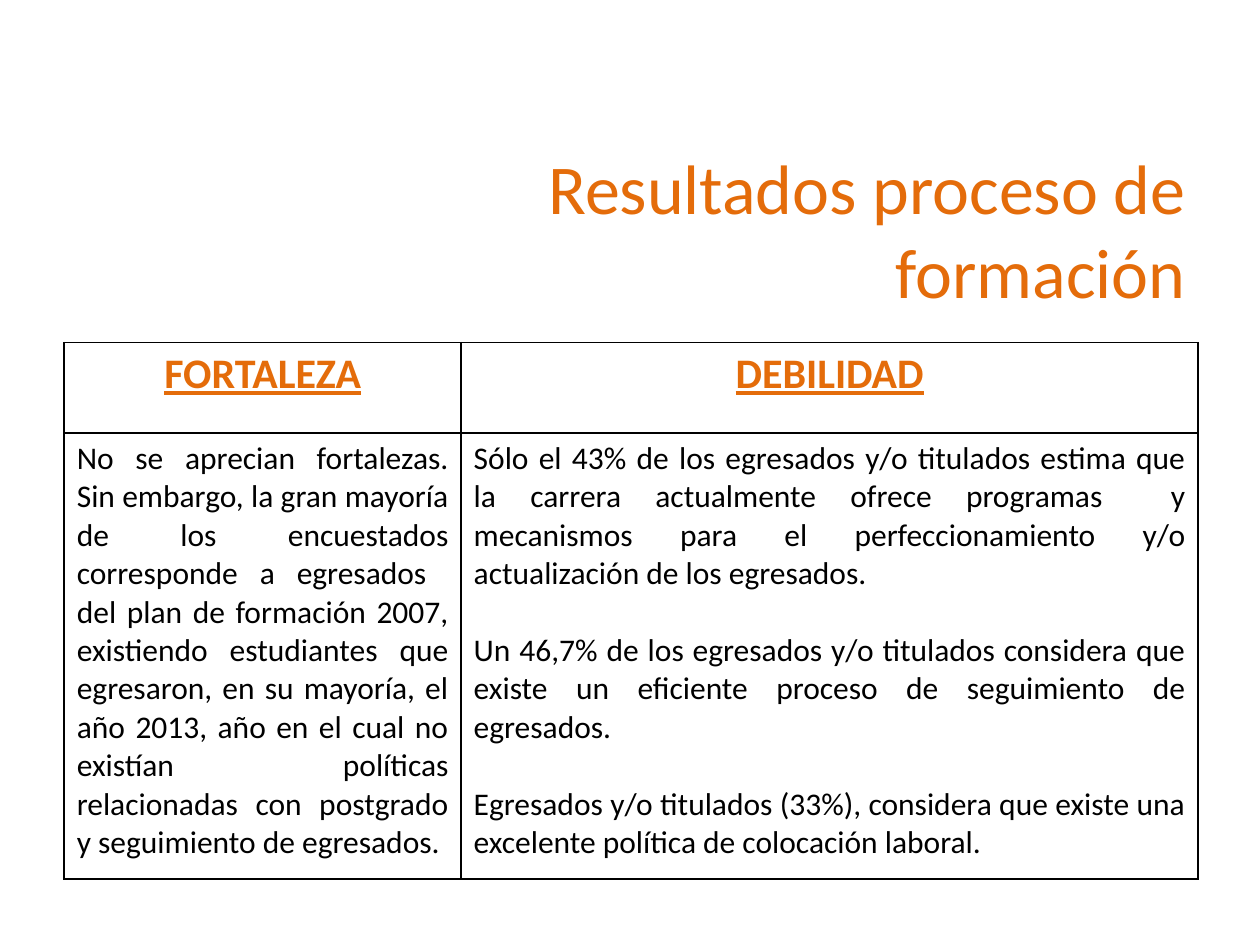
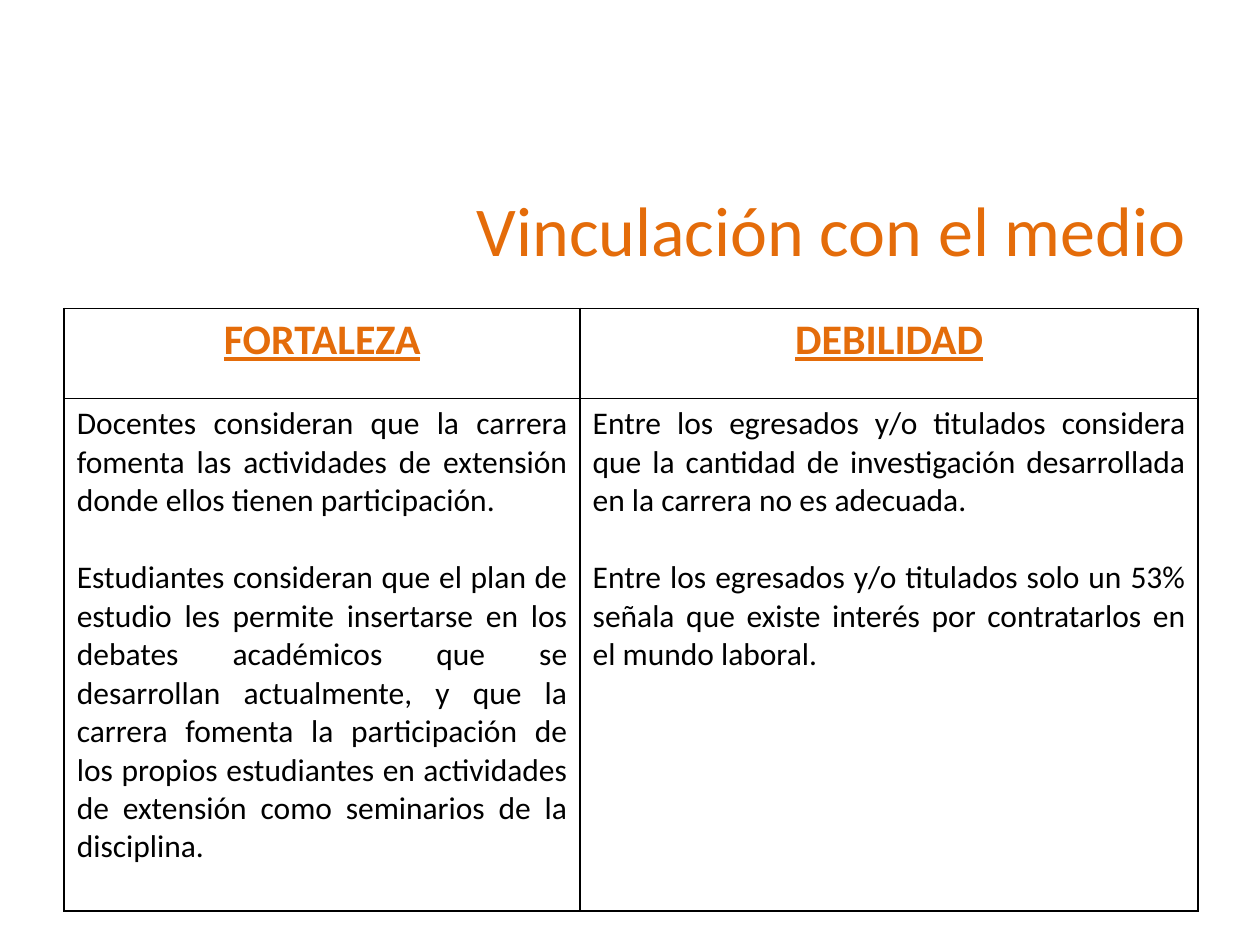
from dataclasses import dataclass

import lxml.etree
import pptx
import pptx.dml.color
import pptx.enum.text
import pptx.oxml.ns
import pptx.util

Pt = pptx.util.Pt
ALIGN = pptx.enum.text.PP_ALIGN
ANCHOR = pptx.enum.text.MSO_ANCHOR

# Shared look
ORANGE, BLACK, WHITE = "E46C0A", "000000", "FFFFFF"
FONT = "Calibri"
TITLE_FORMAT = {"name": FONT, "size": Pt(40), "bold": False, "underline": False}
HEADING_FORMAT = {"name": FONT, "size": Pt(24), "bold": True, "underline": True}
BODY_FORMAT = {"name": FONT, "size": Pt(18), "bold": False, "underline": False}
TITLE_BOX = {"left": Pt(180.7), "top": Pt(105.1), "width": Pt(504), "height": Pt(51.1)}
TABLE_LEFT, TABLE_WIDTH = 36.7, 648
HEADING_HEIGHT = 51.6
PARAGRAPH_GAP = 22
BORDER_WIDTH = 1
HEADINGS = ("FORTALEZA", "DEBILIDAD")


@dataclass
class Assessment:
    title: str
    top: float
    strength_width: float
    body_height: float
    strengths: list[str]
    weaknesses: list[str]


ASSESSMENTS = [
    Assessment(
        "Resultados proceso de formación", 195.8, 226.8, 255,
        ["No se aprecian fortalezas. Sin embargo, la gran mayoría de los encuestados "
         "corresponde a egresados  del plan de formación 2007, existiendo estudiantes "
         "que egresaron, en su mayoría, el año 2013, año en el cual no existían "
         "políticas relacionadas con postgrado y seguimiento de egresados."],
        ["Sólo el 43% de los egresados y/o titulados estima que la carrera actualmente "
         "ofrece programas  y mecanismos para el perfeccionamiento y/o actualización "
         "de los egresados.",
         "Un 46,7% de los egresados y/o titulados considera que existe un eficiente "
         "proceso de seguimiento de egresados.",
         "Egresados y/o titulados (33%), considera que existe una excelente política "
         "de colocación laboral."]),
    Assessment(
        "Vinculación con el medio", 176.2, 294.8, 292.8,
        ["Docentes consideran que la carrera fomenta las actividades de extensión "
         "donde ellos tienen participación.",
         "Estudiantes consideran que el plan de estudio les permite insertarse en los "
         "debates académicos que se desarrollan actualmente, y que la carrera fomenta "
         "la participación de los propios estudiantes en actividades de extensión "
         "como seminarios de la disciplina."],
        ["Entre los egresados y/o titulados considera que la cantidad de investigación "
         "desarrollada en la carrera no es adecuada.",
         "Entre los egresados y/o titulados solo un 53% señala que existe interés por "
         "contratarlos en el mundo laboral."]),
]


def rgb(color: str) -> pptx.dml.color.RGBColor:
    return pptx.dml.color.RGBColor.from_string(color)


def write(frame, texts: list[str], font_format: dict, color: str, align) -> None:
    frame.word_wrap = True
    for index, text in enumerate(texts):
        paragraph = frame.paragraphs[0] if index == 0 else frame.add_paragraph()
        paragraph.alignment = align
        if index:
            paragraph.space_before = Pt(PARAGRAPH_GAP)
        run = paragraph.add_run()
        run.text = text
        for attribute, value in font_format.items():
            setattr(run.font, attribute, value)
        run.font.color.rgb = rgb(color)


def style_cell(cell) -> None:
    """Borders come before the fill in the cell properties."""
    qn = pptx.oxml.ns.qn
    properties = cell._tc.get_or_add_tcPr()
    for side in ("lnL", "lnR", "lnT", "lnB"):
        line = lxml.etree.SubElement(properties, qn(f"a:{side}"), w=str(Pt(BORDER_WIDTH)))
        fill = lxml.etree.SubElement(line, qn("a:solidFill"))
        lxml.etree.SubElement(fill, qn("a:srgbClr"), val=BLACK)
    cell.fill.solid()
    cell.fill.fore_color.rgb = rgb(WHITE)


def add_title(slide, text: str) -> None:
    title = slide.shapes.title
    for attribute, value in TITLE_BOX.items():
        setattr(title, attribute, value)
    title.text_frame.auto_size = pptx.enum.text.MSO_AUTO_SIZE.NONE
    title.text_frame.vertical_anchor = ANCHOR.MIDDLE
    write(title.text_frame, [text], TITLE_FORMAT, ORANGE, ALIGN.RIGHT)


def add_assessment_table(slide, assessment: Assessment) -> None:
    heights = (HEADING_HEIGHT, assessment.body_height)
    widths = (assessment.strength_width, TABLE_WIDTH - assessment.strength_width)
    table = slide.shapes.add_table(
        2, 2, Pt(TABLE_LEFT), Pt(assessment.top), Pt(TABLE_WIDTH), Pt(sum(heights))).table
    table.horz_banding = False
    for row, height in zip(table.rows, heights):
        row.height = Pt(height)
    for column, width in zip(table.columns, widths):
        column.width = Pt(width)

    bodies = (assessment.strengths, assessment.weaknesses)
    for column, (heading, body) in enumerate(zip(HEADINGS, bodies)):
        heading_cell, body_cell = table.cell(0, column), table.cell(1, column)
        style_cell(heading_cell)
        style_cell(body_cell)
        write(heading_cell.text_frame, [heading], HEADING_FORMAT, ORANGE, ALIGN.CENTER)
        write(body_cell.text_frame, body, BODY_FORMAT, BLACK, ALIGN.JUSTIFY)


def main() -> None:
    presentation = pptx.Presentation()
    presentation.slide_width, presentation.slide_height = Pt(720), Pt(540)
    title_only = presentation.slide_layouts.get_by_name("Title Only")
    for assessment in ASSESSMENTS:
        slide = presentation.slides.add_slide(title_only)
        add_title(slide, assessment.title)
        add_assessment_table(slide, assessment)
    presentation.save("out.pptx")


if __name__ == "__main__":
    main()
